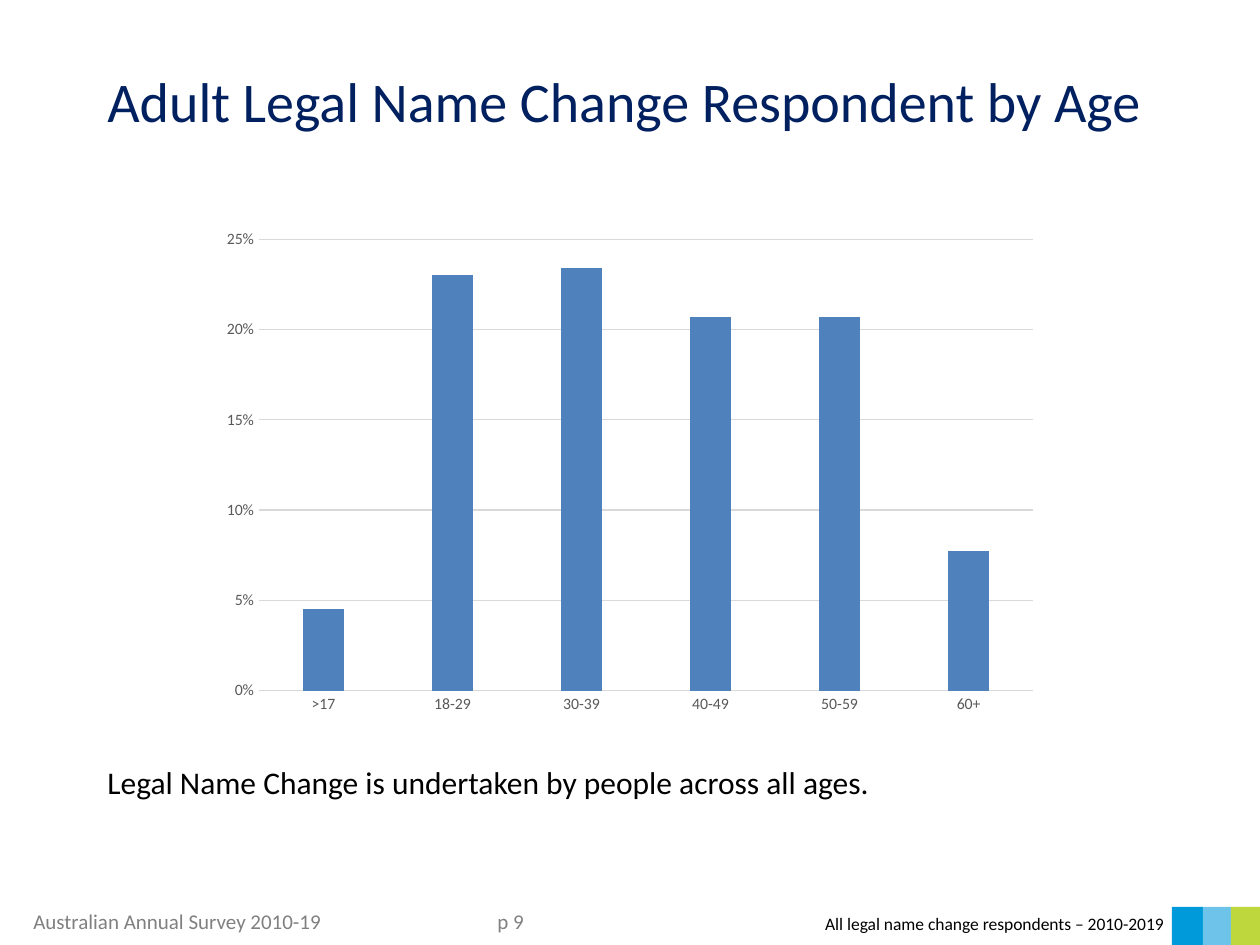
from lxml import etree
from pptx import Presentation
from pptx.chart.data import CategoryChartData
from pptx.dml.color import RGBColor
from pptx.enum.chart import XL_CHART_TYPE, XL_TICK_MARK
from pptx.enum.shapes import MSO_SHAPE
from pptx.enum.text import MSO_ANCHOR, PP_ALIGN
from pptx.oxml.ns import qn
from pptx.util import Emu, Pt

COLUMN = XL_CHART_TYPE.COLUMN_CLUSTERED
NO_TICK = XL_TICK_MARK.NONE
RECT = MSO_SHAPE.RECTANGLE
TOP, MIDDLE = MSO_ANCHOR.TOP, MSO_ANCHOR.MIDDLE
LEFT, RIGHT = PP_ALIGN.LEFT, PP_ALIGN.RIGHT
SCALE = 914400 / 126
FONT = "Calibri"
GRID = "D9D9D9"
rgb = RGBColor.from_string


def box(*px):
    """Turn pixel lengths into EMU."""
    return [Emu(round(n * SCALE)) for n in px]


def add_text(place, text, size, color, align=LEFT, anchor=TOP, tab=None):
    frame = slide.shapes.add_textbox(*box(*place)).text_frame
    frame.word_wrap = True
    frame.vertical_anchor = anchor
    para = frame.paragraphs[0]
    para.text = text
    para.alignment = align
    if tab:
        stops = etree.SubElement(para._p.get_or_add_pPr(), qn("a:tabLst"))
        etree.SubElement(stops, qn("a:tab"), pos=str(box(tab)[0]), algn="l")
    for run in para.runs:
        run.font.name = FONT
        run.font.size = Pt(size)
        run.font.color.rgb = rgb(color)


prs = Presentation()
prs.slide_width, prs.slide_height = box(1260, 945)
slide = prs.slides.add_slide(prs.slide_layouts[6])

# Footer
add_text((21, 902, 1018, 38), "Australian Annual Survey 2010-19\tp 9", 12,
         "808080", tab=464)
edges = [1172, 1203, 1231, 1260]
for left, right, color in zip(edges, edges[1:], ["009ADA", "6EC3EB", "BDD73C"]):
    strip = slide.shapes.add_shape(RECT, *box(left, 907, right - left, 38))
    strip.shadow.inherit = False
    strip.fill.solid()
    strip.fill.fore_color.rgb = rgb(color)
    strip.line.fill.background()

# Title and message
add_text((95, 21, 1134, 158), "Adult Legal Name Change Respondent by Age", 32,
         "002060", anchor=MIDDLE)
add_text((95, 757, 1165, 50),
         "Legal Name Change is undertaken by people across all ages.", 18, "000000")

# Chart
data = CategoryChartData(number_format="0%")
data.categories = [">17", "18-29", "30-39", "40-49", "50-59", "60+"]
data.add_series("Series 1", [0.045, 0.23, 0.234, 0.207, 0.207, 0.077])
chart = slide.shapes.add_chart(COLUMN, *box(210, 220, 840, 504), data).chart
chart.has_legend = False
chart.has_title = False
chart.font.name = FONT
chart.font.size = Pt(10)

plot = chart.plots[0]
plot.gap_width = 219
plot.overlap = -27
plot.vary_by_categories = False
bars = plot.series[0].format.fill
bars.solid()
bars.fore_color.rgb = rgb("4F81BD")

ages, share = chart.category_axis, chart.value_axis
for axis in (ages, share):
    axis.major_tick_mark = axis.minor_tick_mark = NO_TICK
    font = axis.tick_labels.font
    font.name = FONT
    font.size = Pt(9)
    font.color.rgb = rgb("595959")
share.minimum_scale = 0
share.maximum_scale = 0.25
share.major_unit = 0.05
share.tick_labels.number_format = "0%"
share.tick_labels.number_format_is_linked = False
share.format.line.fill.background()
for line in (ages.format.line, share.major_gridlines.format.line):
    line.color.rgb = rgb(GRID)
    line.width = Pt(0.75)

# Source note
add_text((703, 907, 473, 34), "All legal name change respondents – 2010-2019", 10,
         "000000", align=RIGHT)

prs.save("out.pptx")
